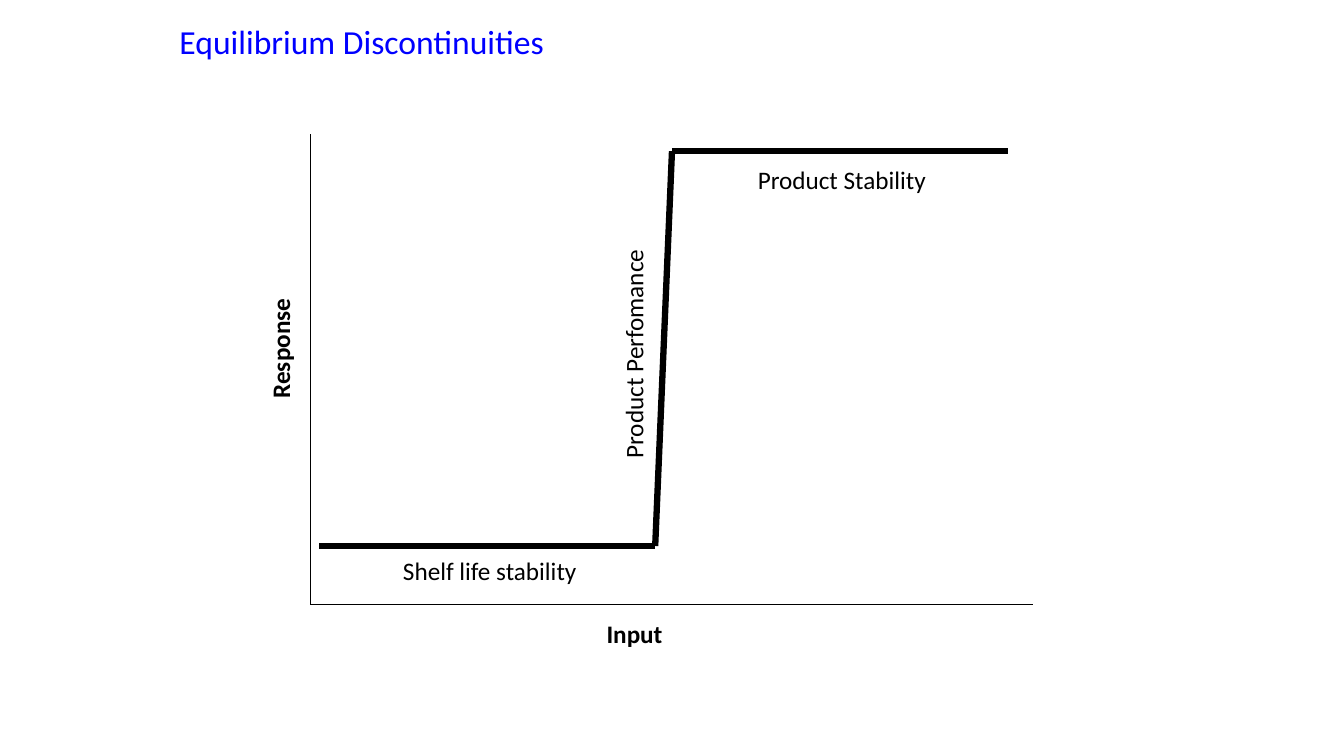
from itertools import pairwise

from lxml import etree
from pptx import Presentation
from pptx.dml.color import RGBColor
from pptx.enum.shapes import MSO_CONNECTOR
from pptx.enum.text import MSO_ANCHOR, MSO_AUTO_SIZE, PP_ALIGN
from pptx.oxml.ns import qn
from pptx.util import Pt

STRAIGHT = MSO_CONNECTOR.STRAIGHT
MIDDLE = MSO_ANCHOR.MIDDLE
LEFT = PP_ALIGN.LEFT
NO_FIT = MSO_AUTO_SIZE.NONE
GROW = MSO_AUTO_SIZE.SHAPE_TO_FIT_TEXT

FONT = "Calibri"
COLORS = {"title": "0000FF", "ink": "000000", "paper": "FFFFFF"}
TITLE_ONLY = 5
LABEL_HEIGHT = 29


def add_span(para, text, size, color, bold=False):
    """Add one formatted run to a paragraph."""
    span = para.add_run()
    span.text = text
    span.font.name = FONT
    span.font.size = Pt(size)
    span.font.bold = bold
    span.font.color.rgb = RGBColor.from_string(COLORS[color])


def add_path(shapes, left, top, points, weight):
    """Join points, given relative to left and top, with straight lines."""
    for (x1, y1), (x2, y2) in pairwise(points):
        line = shapes.add_connector(STRAIGHT, Pt(left + x1), Pt(top + y1),
                                    Pt(left + x2), Pt(top + y2))
        line.line.color.rgb = RGBColor.from_string(COLORS["ink"])
        line.line.width = Pt(weight)
        etree.SubElement(line._element.spPr, qn("a:effectLst"))


def add_label(page, left, top, width, text, bold=False, rotation=0):
    """Add a one-line label that does not wrap."""
    box = page.shapes.add_textbox(Pt(left), Pt(top), Pt(width), Pt(LABEL_HEIGHT))
    box.rotation = rotation
    box.text_frame.word_wrap = False
    box.text_frame.auto_size = GROW
    add_span(box.text_frame.paragraphs[0], text, 18, "ink", bold)


def add_title(page, left, top, width, height):
    """Place and fill the title placeholder."""
    box = page.shapes.title
    box.left, box.top, box.width, box.height = map(Pt, (left, top, width, height))
    frame = box.text_frame
    frame.auto_size = NO_FIT
    frame.vertical_anchor = MIDDLE
    para = frame.paragraphs[0]
    para.alignment = LEFT
    para.line_spacing = 0.9
    add_span(para, "Equilibrium Discontinuities", 24, "title")


def add_step_diagram(page, left, top, width, height):
    """Draw the axes, the step curve and their labels."""
    axes = [(0, 0), (0, height), (width, height)]
    add_path(page.shapes, left, top, axes, 0.75)

    low, high = height - 42, 12
    curve = [(6, low), (246, low), (258, high), (498, high)]
    add_path(page.shapes.add_group_shape().shapes, left, top, curve, 4.5)

    add_label(page, left - 65, top + 138, 86.4, "Response", True, 270)
    add_label(page, left + 204.2, top + height + 5.8, 54.7, "Input", True)
    add_label(page, left + 58.8, top + low + 3.1, 141.1, "Shelf life stability")
    add_label(page, left + 147.4, top + 140.9, 166.3, "Product Perfomance",
              rotation=270)
    add_label(page, left + 312.2, top + high + 5.8, 136.1, "Product Stability")


def main():
    """Build and save the deck."""
    deck = Presentation()
    deck.slide_width, deck.slide_height = Pt(960), Pt(540)
    page = deck.slides.add_slide(deck.slide_layouts[TITLE_ONLY])
    page.background.fill.solid()
    page.background.fill.fore_color.rgb = RGBColor.from_string(COLORS["paper"])
    add_title(page, 121, 10, 720, 42.5)
    add_step_diagram(page, 222, 96, 516, 336)
    deck.save("out.pptx")


if __name__ == "__main__":
    main()
